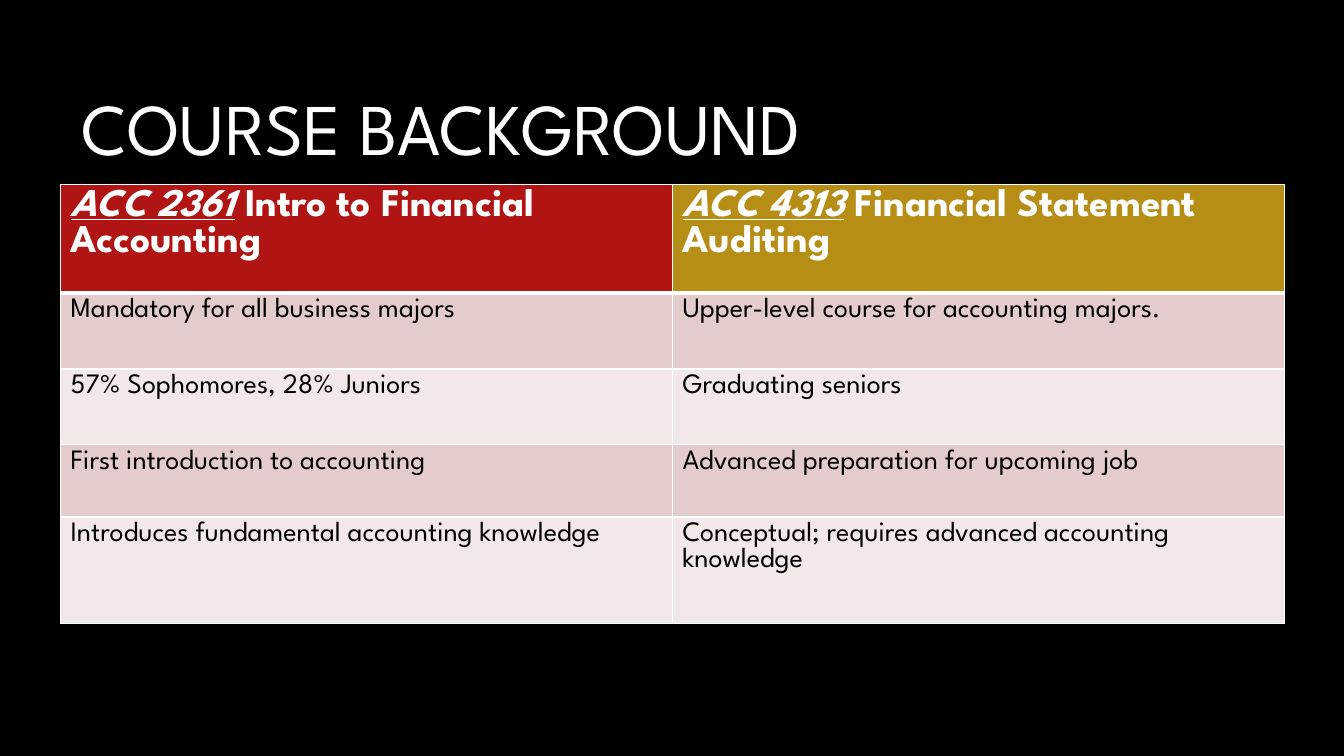
"""Build the course background slide with its two-course comparison table."""
from lxml.etree import SubElement
from pptx import Presentation
from pptx.dml.color import RGBColor
from pptx.enum.text import MSO_ANCHOR, MSO_AUTO_SIZE, PP_ALIGN
from pptx.oxml.ns import qn
from pptx.util import Inches, Pt

COLORS = {
    "background": "000000",
    "light": "FFFFFF",
    "dark": "000000",
    "red": "B01513",
    "gold": "B68E15",
    "band": "E4CCCC",
    "pale": "F2E8E7",
}
TEXT_FORMATS = {
    "title": {"size": Pt(52), "bold": False},
    "header": {"size": Pt(28), "bold": True, "italic": False, "underline": False},
    "code": {"size": Pt(28), "bold": True, "italic": True, "underline": True},
    "body": {"size": Pt(20), "bold": False},
}
TITLE_FRAME = {
    "word_wrap": True,
    "auto_size": MSO_AUTO_SIZE.NONE,
    "vertical_anchor": MSO_ANCHOR.TOP,
    "margin_top": Inches(0.25),
}
COURSES = [
    ("ACC 2361", " Intro to Financial Accounting", "red"),
    ("ACC 4313", " Financial Statement Auditing", "gold"),
]
COMPARISONS = [
    ("Mandatory for all business majors", "Upper-level course for accounting majors."),
    ("57% Sophomores, 28% Juniors", "Graduating seniors"),
    ("First introduction to accounting", "Advanced preparation for upcoming job"),
    ("Introduces fundamental accounting knowledge",
     "Conceptual; requires advanced accounting knowledge"),
]
ROW_PERCENTS = [14.4, 10, 10, 9.6, 14.13]


def apply(target, values):
    """Set every attribute named in a dict of format values."""
    for name, value in values.items():
        setattr(target, name, value)


class CourseSlide:
    """Hold the style and the current slide, with lengths in percent."""

    font_name = "League Spartan"

    def __init__(self, presentation):
        """Add a title-only slide with a plain background."""
        self.width = presentation.slide_width
        self.height = presentation.slide_height
        self.slide = presentation.slides.add_slide(presentation.slide_layouts[5])
        self.fill(self.slide.background.fill, "background")

    def box(self, left, top, width, height):
        """Turn percentages of the slide into a position and size."""
        return {
            "left": round(self.width * left / 100),
            "top": round(self.height * top / 100),
            "width": round(self.width * width / 100),
            "height": round(self.height * height / 100),
        }

    def fill(self, fill, color):
        """Apply a solid named color."""
        fill.solid()
        fill.fore_color.rgb = RGBColor.from_string(COLORS[color])

    def add_text(self, paragraph, text, style, color):
        """Add one formatted run to a paragraph."""
        run = paragraph.add_run()
        run.text = text
        apply(run.font, {"name": self.font_name, **TEXT_FORMATS[style]})
        run.font.color.rgb = RGBColor.from_string(COLORS[color])

    def title(self, text, *percents):
        """Place and format the title placeholder."""
        shape = self.slide.shapes.title
        apply(shape, self.box(*percents))
        apply(shape.text_frame, TITLE_FRAME)
        paragraph = shape.text_frame.paragraphs[0]
        paragraph.alignment = PP_ALIGN.LEFT
        self.add_text(paragraph, text, "title", "light")

    def cell(self, cell, runs, color, top=1, bottom=1):
        """Add text, borders and fill to one table cell."""
        for text, style, text_color in runs:
            self.add_text(cell.text_frame.paragraphs[0], text, style, text_color)
        properties = cell._tc.get_or_add_tcPr()
        borders = {"a:lnL": 1, "a:lnR": 1, "a:lnT": top, "a:lnB": bottom}
        for tag, points in borders.items():
            line = SubElement(properties, qn(tag), w=str(Pt(points)))
            solid = SubElement(line, qn("a:solidFill"))
            SubElement(solid, qn("a:srgbClr"), val=COLORS["light"])
        self.fill(cell.fill, color)

    def table(self, courses, comparisons, row_percents, left, top, width):
        """Add the comparison table with colored headers and banded rows."""
        place = self.box(left, top, width, sum(row_percents))
        frame = self.slide.shapes.add_table(len(row_percents), len(courses), **place)
        table = frame.table
        for row, percent in zip(table.rows, row_percents):
            row.height = round(self.height * percent / 100)
        for column, (code, name, color) in enumerate(courses):
            runs = [(code, "code", "light"), (name, "header", "light")]
            self.cell(table.cell(0, column), runs, color, bottom=3)
        for row, texts in enumerate(comparisons, start=1):
            for column, text in enumerate(texts):
                self.cell(table.cell(row, column), [(text, "body", "dark")],
                          "band" if row % 2 else "pale", top=3 if row == 1 else 1)


def main():
    """Create and save the presentation."""
    presentation = Presentation()
    apply(presentation, {"slide_width": Inches(13.33), "slide_height": Inches(7.5)})
    slide = CourseSlide(presentation)
    slide.title("COURSE BACKGROUND", 5.33, 7.6, 88.97, 19.47)
    slide.table(COURSES, COMPARISONS, ROW_PERCENTS, 4.5, 24.4, 91.07)
    presentation.save("out.pptx")


if __name__ == "__main__":
    main()
